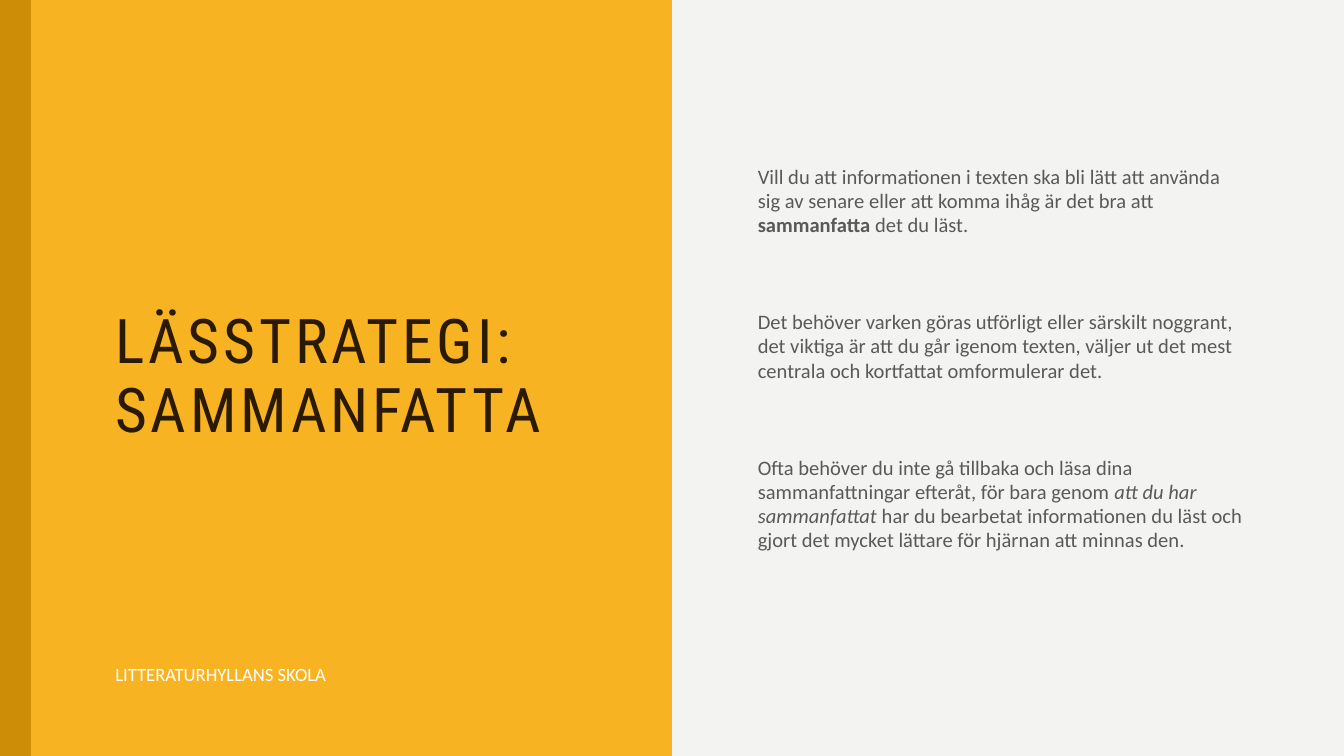
from pptx import Presentation
from pptx.dml.color import RGBColor
from pptx.enum.shapes import MSO_SHAPE
from pptx.enum.text import MSO_ANCHOR
from pptx.util import Inches, Pt

RECTANGLE = MSO_SHAPE.RECTANGLE
TOP, MIDDLE = MSO_ANCHOR.TOP, MSO_ANCHOR.MIDDLE

COLORS = {
    "paper": "F3F3F2",
    "yellow": "F8B323",
    "ochre": "CE8D07",
    "dark": "2A1A00",
    "grey": "595959",
    "white": "FFFFFF",
}
WIDTH, HEIGHT = 10, 10 * 9 / 16
HALF_WAVES = 10
# Outward steps of the edge from a trough to the next crest
WAVE_STEPS = [0, 0, 0.01, 0.02, 0.03, 0.05, 0.06, 0.08,
              0.1, 0.11, 0.13, 0.14, 0.15, 0.15, 0.16]

# Each paragraph is a list of (text, style) spans
BODY = [
    [("Vill du att informationen i texten ska bli lätt att använda sig av "
      "senare eller att komma ihåg är det bra att ", ""),
     ("sammanfatta", "bold"),
     (" det du läst.", "")],
    [("Det behöver varken göras utförligt eller särskilt noggrant, det viktiga "
      "är att du går igenom texten, väljer ut det mest centrala och kortfattat "
      "omformulerar det.", "")],
    [("Ofta behöver du inte gå tillbaka och läsa dina sammanfattningar efteråt, "
      "för bara genom ", ""),
     ("att du har sammanfattat", "italic"),
     (" har du bearbetat informationen du läst och gjort det mycket lättare för "
      "hjärnan att minnas den.", "")],
]


def color(name):
    return RGBColor.from_string(COLORS[name])


def paint(shape, name):
    shape.shadow.inherit = False
    shape.fill.solid()
    shape.fill.fore_color.rgb = color(name)
    shape.line.fill.background()


def add_text(page, box, anchor):
    frame = page.shapes.add_textbox(*map(Inches, box)).text_frame
    frame.word_wrap = True
    frame.vertical_anchor = anchor
    return frame


def set_font(para, name, size, color_name):
    para.font.name = name
    para.font.size = Pt(size)
    para.font.color.rgb = color(color_name)


def add_wavy_panel(page, left, top, width, height):
    """Yellow panel with a wavy right edge and a darker strip on the left."""
    trough = left + width - WAVE_STEPS[-1]
    half = height / HALF_WAVES
    last = len(WAVE_STEPS) - 1
    edge = []
    for wave in range(HALF_WAVES):
        steps = WAVE_STEPS if wave % 2 == 0 else WAVE_STEPS[::-1]
        edge += [(trough + step, top + half * (wave + index / last))
                 for index, step in enumerate(steps)]
    outline = edge + [(left, top + height)]
    builder = page.shapes.build_freeform(left, top, scale=Inches(1))
    builder.add_line_segments(outline, close=True)
    paint(builder.convert_to_shape(), "yellow")

    strip = page.shapes.add_shape(
        RECTANGLE, *map(Inches, (left, top, 0.23, height)))
    paint(strip, "ochre")


def add_title(page, left, top, width, height):
    frame = add_text(page, (left, top, width, height), MIDDLE)
    para = frame.paragraphs[0]
    span = para.add_run()
    span.text = "LÄSSTRATEGI: SAMMANFATTA"
    para.line_spacing = 0.93
    set_font(para, "Roboto Condensed", 33, "dark")
    # Letter spacing of 2 pt
    span.font._element.set("spc", "200")


def add_body(page, left, top, width, height):
    frame = add_text(page, (left, top, width, height), MIDDLE)
    frame.margin_bottom = Inches(0.32)
    for index, spans in enumerate(BODY):
        para = frame.add_paragraph() if index else frame.paragraphs[0]
        para.line_spacing = 0.98
        para.space_before = Pt(39 if index else 0)
        set_font(para, "Calibri", 11, "grey")
        for text, style in spans:
            span = para.add_run()
            span.text = text
            if style == "bold":
                span.font.bold = True
            elif style == "italic":
                span.font.italic = True


def add_footer(page, left, top, width, height):
    frame = add_text(page, (left, top, width, height), TOP)
    para = frame.paragraphs[0]
    para.text = "LITTERATURHYLLANS SKOLA"
    set_font(para, "Calibri", 10, "white")


def main():
    deck = Presentation()
    deck.slide_width, deck.slide_height = Inches(WIDTH), Inches(HEIGHT)
    page = deck.slides.add_slide(deck.slide_layouts[6])
    page.background.fill.solid()
    page.background.fill.fore_color.rgb = color("paper")

    add_wavy_panel(page, 0, 0, 5.17, HEIGHT)
    add_title(page, 0.76, 0.95, 3.7, 3.72)
    add_body(page, 5.54, 0.93, 3.84, 3.75)
    add_footer(page, 0.76, 4.88, 2.85, 0.27)
    deck.save("out.pptx")


if __name__ == "__main__":
    main()
